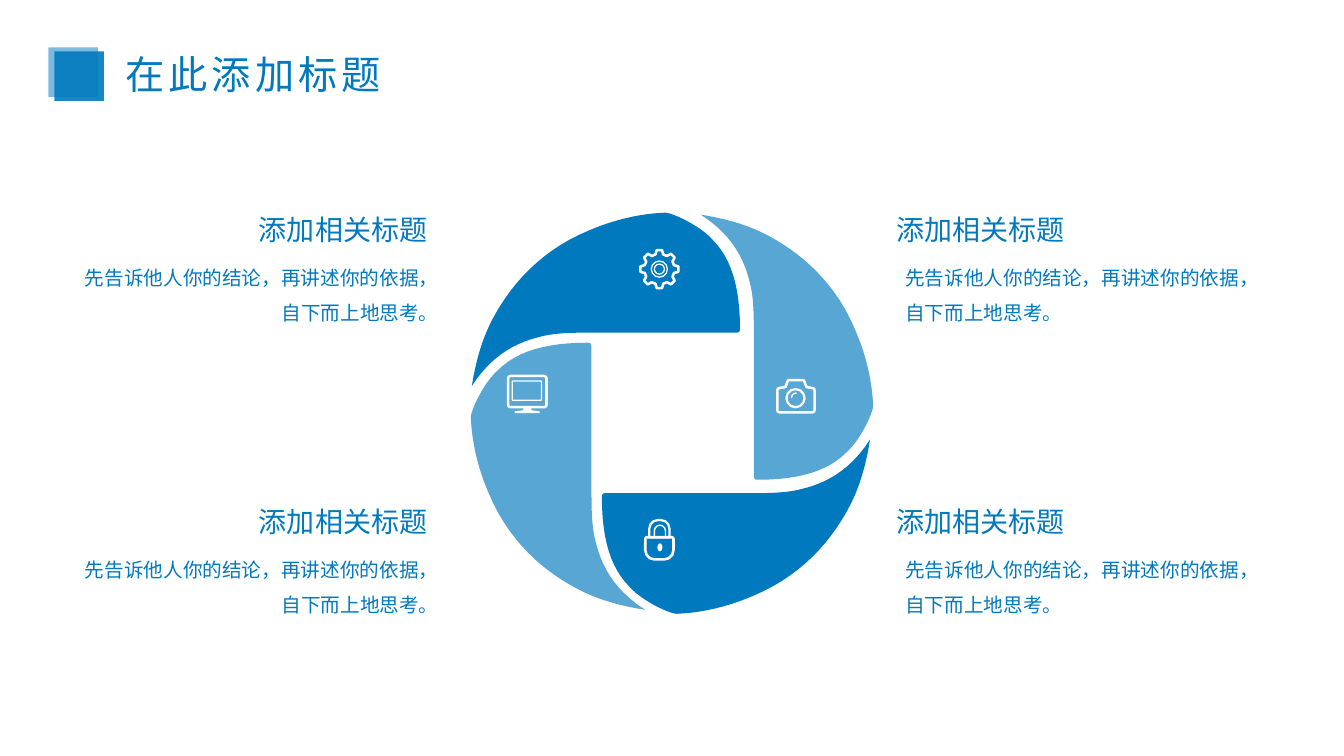
from math import cos, pi, sin

from lxml import etree
from pptx import Presentation
from pptx.dml.color import RGBColor
from pptx.enum.shapes import MSO_SHAPE
from pptx.enum.text import MSO_ANCHOR, MSO_AUTO_SIZE, PP_ALIGN
from pptx.oxml.ns import qn
from pptx.util import Inches, Pt

RECT = MSO_SHAPE.RECTANGLE
ROUND = MSO_SHAPE.ROUNDED_RECTANGLE
ARCH = MSO_SHAPE.ROUND_2_SAME_RECTANGLE
OVAL = MSO_SHAPE.OVAL
TOP = MSO_ANCHOR.TOP
GROW = MSO_AUTO_SIZE.SHAPE_TO_FIT_TEXT
LEFT, RIGHT, JUST = PP_ALIGN.LEFT, PP_ALIGN.RIGHT, PP_ALIGN.JUSTIFY

FONT = "Noto Sans CJK SC"
BLUE = "0079BE"
WHITE = "FFFFFF"
HEAD = "添加相关标题"
BODY = "先告诉他人你的结论，再讲述你的依据，自下而上地思考。"

BLADE = [
    (4.69, 3.83),
    (4.75, 3.46, 4.84, 3.24, 4.98, 3.02),
    (5.16, 2.73, 5.45, 2.45, 5.84, 2.29),
    (6.09, 2.18, 6.35, 2.12, 6.6, 2.11),
    (6.67, 2.11, 6.95, 2.24, 7.07, 2.38),
    (7.25, 2.56, 7.34, 2.84, 7.34, 3.26),
    (7.34, 3.29, 7.33, 3.3, 7.3, 3.3),
    (5.91, 3.3),
    (5.7, 3.3, 5.52, 3.3, 5.37, 3.34),
    (5.16, 3.39, 4.9, 3.5, 4.69, 3.83),
]
BLADES = [
    ((4.68, 2.11, 2.66, 1.72), 100),
    ((6.95, 2.13, 1.71, 2.63), 66),
    ((5.97, 4.36, 2.66, 1.73), 100),
    ((4.67, 3.4, 1.73, 2.65), 66),
]
CAMERA = [
    (7.73, 3.85), (7.79, 3.84), (7.81, 3.79),
    (7.81, 3.78, 7.82, 3.77, 7.83, 3.77), (7.96, 3.77),
    (7.97, 3.77, 7.98, 3.78, 7.98, 3.79), (8, 3.84), (8.06, 3.85),
    (8.07, 3.85, 8.08, 3.86, 8.08, 3.88), (8.08, 4.06),
    (8.08, 4.08, 8.07, 4.09, 8.06, 4.09), (7.73, 4.09),
    (7.72, 4.09, 7.71, 4.08, 7.71, 4.06), (7.71, 3.88),
    (7.71, 3.86, 7.72, 3.85, 7.73, 3.85),
]
GLINT = [(7.85, 3.95), (7.85, 3.92, 7.87, 3.9, 7.9, 3.9)]
STAND = [(5.19, 4.04), (5.27, 4.04), (5.27, 4.07), (5.34, 4.08),
         (5.36, 4.08, 5.36, 4.1, 5.34, 4.1), (5.12, 4.1),
         (5.1, 4.1, 5.1, 4.08, 5.11, 4.08), (5.19, 4.07)]


def tint(color, hue):
    color.rgb = RGBColor.from_string(hue)


def paint(shape, hue, alpha=100):
    shape.shadow.inherit = False
    shape.fill.solid()
    tint(shape.fill.fore_color, hue)
    shape.line.fill.background()
    if alpha < 100:
        node = shape.fill._xPr.find(qn("a:solidFill"))[0]
        etree.SubElement(node, qn("a:alpha"), val=str(alpha * 1000))


def stroke(shape, width):
    shape.shadow.inherit = False
    shape.fill.background()
    tint(shape.line.color, WHITE)
    shape.line.width = Pt(width)


def preset(slide, kind, box, *bends):
    shape = slide.shapes.add_shape(kind, *map(Inches, box))
    for n, bend in enumerate(bends):
        shape.adjustments[n] = bend
    return shape


def trace(steps):
    dots = [steps[0]]
    for step in steps[1:]:
        if len(step) == 2:
            dots.append(step)
            continue
        ends = [dots[-1], step[:2], step[2:4], step[4:]]
        for n in range(1, 13):
            t = n / 12
            mix = ((1 - t) ** 3, 3 * t * (1 - t) ** 2,
                   3 * t * t * (1 - t), t ** 3)
            dots.append(tuple(sum(m * p[k] for m, p in zip(mix, ends))
                              for k in (0, 1)))
    return dots


def outline(slide, dots, close=True):
    dots = [(Inches(x), Inches(y)) for x, y in dots]
    form = slide.shapes.build_freeform(*dots[0], scale=1.0)
    form.add_line_segments(dots[1:], close=close)
    return form.convert_to_shape()


def fit(dots, box):
    left, top, wide, high = box
    xs, ys = zip(*dots)
    across = wide / (max(xs) - min(xs))
    down = high / (max(ys) - min(ys))
    return [(left + (x - min(xs)) * across, top + (y - min(ys)) * down)
            for x, y in dots]


def write(shape, text, size, align, space=None):
    frame = shape.text_frame
    frame.text = text
    frame.word_wrap = True
    frame.auto_size = GROW
    frame.vertical_anchor = TOP
    para = frame.paragraphs[0]
    para.alignment = align
    if space:
        para.line_spacing = space
    run = para.runs[0]
    run.font.size = Pt(size)
    tint(run.font.color, BLUE)
    run.font.name = FONT
    props = run._r.get_or_add_rPr()
    etree.SubElement(props, qn("a:ea"), typeface=FONT)
    return props


def label(slide, text, box, size, align, space=None):
    shape = slide.shapes.add_textbox(*map(Inches, box))
    write(shape, text, size, align, space)


def header(slide):
    paint(preset(slide, RECT, (0.48, 0.47, 0.49, 0.49)), BLUE, 51)
    paint(preset(slide, RECT, (0.54, 0.51, 0.49, 0.49)), BLUE, 90)
    title = slide.shapes.title
    title.left, title.top = Inches(1.14), Inches(0.45)
    title.width, title.height = Inches(3.02), Inches(0.57)
    write(title, "在此添加标题", 28, JUST).set("spc", "300")


def wheel(slide):
    dots = trace(BLADE)
    for box, alpha in BLADES:
        paint(outline(slide, fit(dots, box)), BLUE, alpha)
        dots = [(-y, x) for x, y in dots]


def gear(slide):
    x, y = 6.54, 2.67
    rim = []
    for n in range(8):
        for turn, reach in ((-15, 0.15), (-8, 0.19), (8, 0.19), (15, 0.15)):
            angle = (n * 45 + turn) * pi / 180
            rim.append((x + reach * cos(angle), y + reach * sin(angle)))
    stroke(outline(slide, rim), 1.8)
    for r in (0.08, 0.05):
        stroke(preset(slide, OVAL, (x - r, y - r, 2 * r, 2 * r)), 0.9)


def camera(slide):
    stroke(outline(slide, trace(CAMERA)), 1.8)
    stroke(preset(slide, OVAL, (7.8, 3.86, 0.18, 0.18)), 1.6)
    stroke(outline(slide, trace(GLINT), False), 1)


def lock(slide):
    stroke(preset(slide, ARCH, (6.4, 5.33, 0.28, 0.22), 0.08, 0.42), 1.8)
    stroke(preset(slide, ARCH, (6.44, 5.16, 0.2, 0.17), 0.5, 0), 1.6)
    stroke(preset(slide, ARCH, (6.49, 5.21, 0.11, 0.12), 0.5, 0), 1)
    paint(preset(slide, OVAL, (6.52, 5.39, 0.05, 0.08)), WHITE)


def screen(slide):
    stroke(preset(slide, ROUND, (5.04, 3.73, 0.38, 0.31), 0.08), 1.8)
    stroke(preset(slide, ROUND, (5.08, 3.78, 0.29, 0.19), 0.04), 0.9)
    paint(outline(slide, trace(STAND)), WHITE)


def main():
    deck = Presentation()
    deck.slide_width, deck.slide_height = Inches(13.33), Inches(7.5)
    slide = deck.slides.add_slide(deck.slide_layouts[5])
    for head, body, align in ((2.47, 0.72, RIGHT), (8.79, 8.88, LEFT)):
        for top in (2.06, 4.96):
            label(slide, BODY, (body, top + 0.41, 3.73, 0.77), 14, align, 1.5)
            label(slide, HEAD, (head, top, 2.07, 0.44), 20, LEFT)
    wheel(slide)
    for icon in (lock, gear, camera, screen):
        icon(slide)
    header(slide)
    deck.save("out.pptx")


if __name__ == "__main__":
    main()
